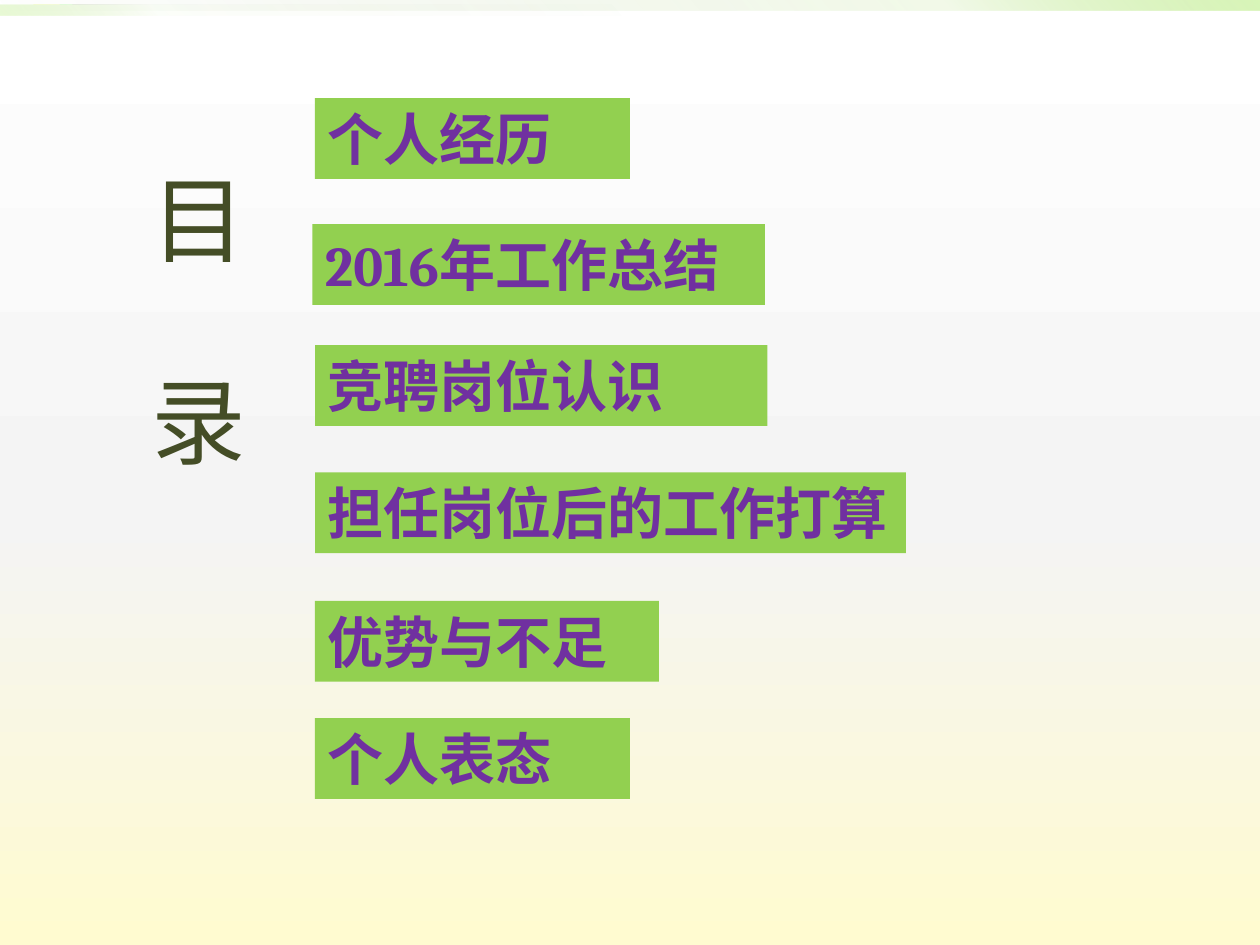
from pptx import Presentation
from pptx.dml.color import RGBColor
from pptx.enum.shapes import MSO_SHAPE
from pptx.enum.text import MSO_ANCHOR, MSO_AUTO_SIZE, PP_ALIGN
from pptx.oxml.ns import qn
from pptx.util import Inches, Pt
from lxml.etree import SubElement


def rgb(value):
    return RGBColor.from_string(value)


def set_gradient(fill, element, stops, angle):
    """Stops are (position %, colour, opacity %)."""
    fill.gradient()
    grad = next(element.iter(qn("a:gradFill")))
    gs_list = grad.find(qn("a:gsLst"))
    for gs in list(gs_list):
        gs_list.remove(gs)
    for pos, color, opacity in stops:
        gs = SubElement(gs_list, qn("a:gs"), pos=str(pos * 1000))
        clr = SubElement(gs, qn("a:srgbClr"), val=color)
        if opacity < 100:
            SubElement(clr, qn("a:alpha"), val=str(opacity * 1000))
    grad.find(qn("a:lin")).set("ang", str(angle * 60000))


prs = Presentation()
prs.slide_width, prs.slide_height = Inches(10), Inches(7.5)
s = prs.slides.add_slide(prs.slide_layouts[5])

# Background
set_gradient(s.background.fill, s.element,
             [(0, "FFFFFF", 100), (55, "F4F4F4", 100), (100, "FFFBD0", 100)], 90)

# Thin bars along the top edge: top, width, middle and end opacity, angle
for top, width, middle, end, angle in [(0, 10, 20, 100, 315), (0.04, 5, 5, 60, 135)]:
    bar = s.shapes.add_shape(MSO_SHAPE.RECTANGLE, 0, Inches(top), Inches(width), Inches(0.08))
    bar.shadow.inherit = False
    bar.line.fill.background()
    set_gradient(bar.fill, bar.element,
                 [(0, "7C9959", 0), (75, "BEE78F", middle), (100, "D9F6B9", end)], angle)

# Vertical title, its two characters spread by letter spacing
title = s.shapes.title
title.left, title.top, title.width, title.height = (Inches(v) for v in (1.02, 1.25, 1.06, 4.45))
tf = title.text_frame
tf.vertical_anchor = MSO_ANCHOR.MIDDLE
tf.auto_size = MSO_AUTO_SIZE.NONE
tf.margin_top = Inches(0.12)
tf._txBody.bodyPr.set("vert", "eaVert")
p = tf.paragraphs[0]
p.alignment = PP_ALIGN.LEFT
for char, spacing in [("目", 61), ("录", 0)]:
    r = p.add_run()
    r.text = char
    for name, value in {"size": Pt(54), "name": "Calibri"}.items():
        setattr(r.font, name, value)
    r.font.color.rgb = rgb("444D26")
    r.font._element.set("spc", str(spacing * 100))

# Contents entries: text, left, top, width
entries = [
    ("个人经历", 2.5, 0.78, 2.5),
    ("2016年工作总结", 2.48, 1.78, 3.59),
    ("竞聘岗位认识", 2.5, 2.74, 3.59),
    ("担任岗位后的工作打算", 2.5, 3.75, 4.69),
    ("优势与不足", 2.5, 4.77, 2.73),
    ("个人表态", 2.5, 5.7, 2.5),
]
for text, left, top, width in entries:
    sp = s.shapes.add_shape(MSO_SHAPE.RECTANGLE, Inches(left), Inches(top), Inches(width), Inches(0.64))
    sp.shadow.inherit = False
    sp.fill.solid()
    sp.fill.fore_color.rgb = rgb("92D050")
    sp.line.fill.background()
    tf = sp.text_frame
    for name, value in {"word_wrap": True, "auto_size": MSO_AUTO_SIZE.SHAPE_TO_FIT_TEXT,
                        "vertical_anchor": MSO_ANCHOR.TOP}.items():
        setattr(tf, name, value)
    p = tf.paragraphs[0]
    p.alignment = PP_ALIGN.LEFT
    r = p.add_run()
    r.text = text
    for name, value in {"size": Pt(32), "name": "Cambria", "bold": True}.items():
        setattr(r.font, name, value)
    r.font.color.rgb = rgb("7030A0")

prs.save("out.pptx")
